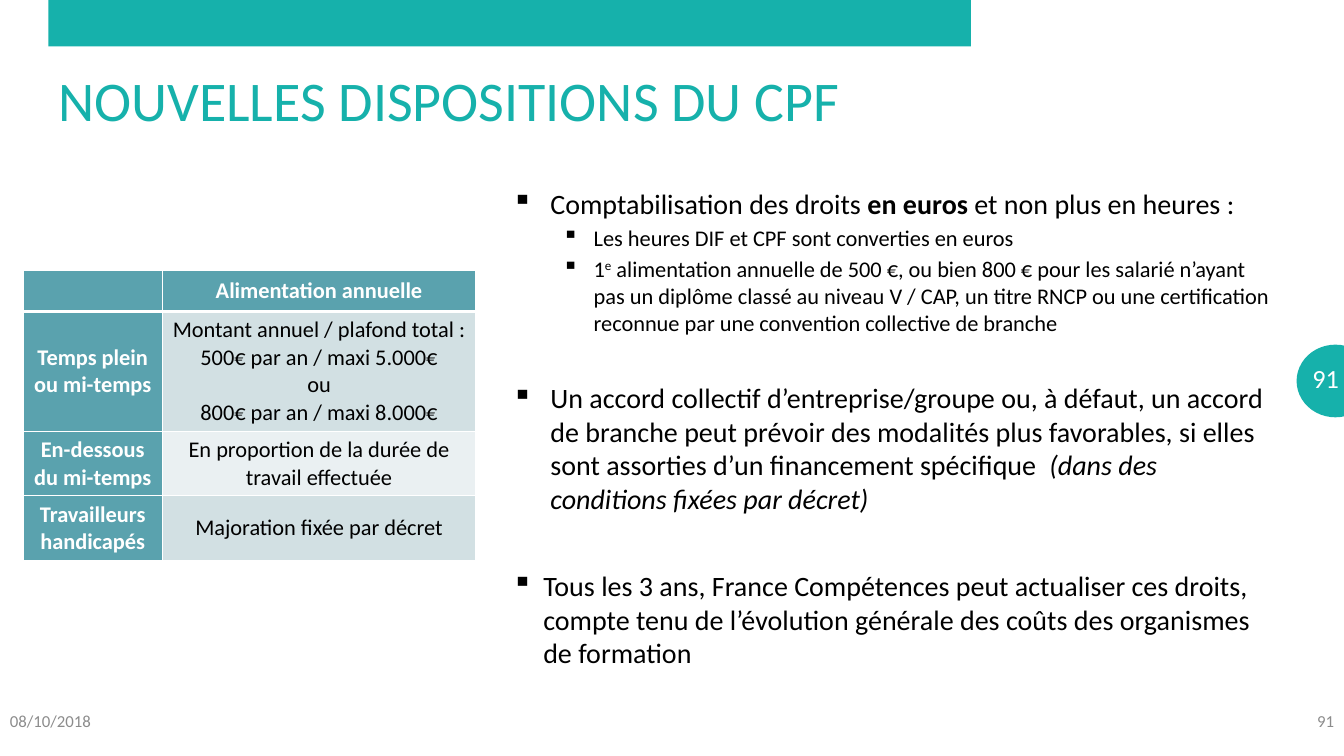
"""Build the slide on the new rules of the CPF training account."""
from dataclasses import dataclass

from lxml import etree
from pptx import Presentation
from pptx.dml.color import RGBColor
from pptx.enum.shapes import MSO_SHAPE
from pptx.enum.text import MSO_ANCHOR, PP_ALIGN
from pptx.oxml.ns import qn
from pptx.util import Pt

PX = 9144
RECTANGLE, OVAL = MSO_SHAPE.RECTANGLE, MSO_SHAPE.OVAL
TOP, MIDDLE = MSO_ANCHOR.TOP, MSO_ANCHOR.MIDDLE
LEFT, CENTER, RIGHT = PP_ALIGN.LEFT, PP_ALIGN.CENTER, PP_ALIGN.RIGHT


@dataclass(frozen=True)
class Theme:
    """Colours, font and type sizes of the slide."""
    font: str = "Calibri"
    accent: str = "16B1AB"
    header: str = "5AA2AE"
    band_dark: str = "D2E0E3"
    band_light: str = "EAF0F2"
    white: str = "FFFFFF"
    black: str = "000000"
    grey: str = "8C8C8C"
    title: float = 40
    body: float = 20
    badge: float = 18.7
    detail: float = 16
    footer: float = 12


THEME = Theme()

TABLE_ROWS = [
    ("", ["Alimentation annuelle"]),
    ("Temps plein ou mi-temps", ["Montant annuel / plafond total :", "500€ par an / maxi 5.000€",
                                 "ou", "800€ par an / maxi 8.000€"]),
    ("En-dessous du mi-temps", ["En proportion de la durée de travail effectuée"]),
    ("Travailleurs handicapés", ["Majoration fixée par décret"]),
]

BULLETS = [
    (THEME.body, 38, 38, 0, [("Comptabilisation des droits ", ""), ("en euros ", "bold"),
                             ("et non plus en heures :", "")]),
    (THEME.detail, 81, 31, 3, [("Les heures DIF et CPF sont converties en euros", "")]),
    (THEME.detail, 81, 31, 3, [
        ("1", ""), ("e", "superscript"),
        (" alimentation annuelle de 500 €, ou bien 800 € pour les salarié n’ayant pas un diplôme "
         "classé au niveau V / CAP, un titre RNCP ou une certification reconnue par une "
         "convention collective de branche", "")]),
    (THEME.body, 38, 38, 32, [
        ("Un accord collectif d’entreprise/groupe ou, à défaut, un accord de branche peut prévoir "
         "des modalités plus favorables, si elles sont assorties d’un financement spécifique  ", ""),
        ("(dans des conditions fixées par décret)", "italic")]),
    (THEME.body, 31, 31, 38, [
        ("Tous les 3 ans, France Compétences peut actualiser ces droits, compte tenu de "
         "l’évolution générale des coûts des organismes de formation", "")]),
]


def color(value):
    """Turn a hex string into a colour."""
    return RGBColor.from_string(value)


def box(*lengths):
    """Turn pixel lengths into EMU."""
    return [length * PX for length in lengths]


def add_run(paragraph, text, size, fill, style=""):
    """Add one formatted run to a paragraph."""
    run = paragraph.add_run()
    run.text = text
    run.font.name = THEME.font
    run.font.size = Pt(size)
    run.font.color.rgb = color(fill)
    run.font.bold = style == "bold"
    run.font.italic = style == "italic"
    if style == "superscript":
        run.font._element.set("baseline", "30000")


def add_block(slide, kind, place):
    """Add a plain accent-coloured shape."""
    shape = slide.shapes.add_shape(kind, *box(*place))
    shape.shadow.inherit = False
    shape.fill.solid()
    shape.fill.fore_color.rgb = color(THEME.accent)
    return shape


def add_frame(slide, place, anchor):
    """Add a wrapping text box and return its text frame."""
    frame = slide.shapes.add_textbox(*box(*place)).text_frame
    frame.word_wrap = True
    frame.vertical_anchor = anchor
    return frame


def add_label(slide, place, text, size, fill, align=LEFT):
    """Add a one-line text box."""
    frame = add_frame(slide, place, MIDDLE)
    frame.paragraphs[0].alignment = align
    add_run(frame.paragraphs[0], text, size, fill)
    return frame


def add_bullets(slide, place):
    """Add the bulleted body text."""
    frame = add_frame(slide, place, TOP)
    for index, (size, margin, hanging, before, runs) in enumerate(BULLETS):
        paragraph = frame.add_paragraph() if index else frame.paragraphs[0]
        properties = paragraph._p.get_or_add_pPr()
        properties.set("marL", str(margin * PX))
        properties.set("indent", str(-hanging * PX))
        etree.SubElement(properties, qn("a:buChar")).set("char", "▪")
        if before:
            paragraph.space_before = Pt(before)
        for text, style in runs:
            add_run(paragraph, text, size, THEME.black, style)


def set_borders(cell, top, bottom):
    """Give a cell white borders, with top and bottom widths in points."""
    properties = cell._tc.get_or_add_tcPr()
    for index, (side, width) in enumerate(zip("LRTB", (1, 1, top, bottom))):
        line = etree.Element(qn(f"a:ln{side}"), w=str(Pt(width)))
        fill = etree.SubElement(line, qn("a:solidFill"))
        etree.SubElement(fill, qn("a:srgbClr")).set("val", THEME.white)
        properties.insert(index, line)


def fill_cell(cell, lines, background, text_fill, style):
    """Fill a cell and write its centred lines."""
    cell.fill.solid()
    cell.fill.fore_color.rgb = color(background)
    cell.vertical_anchor = MIDDLE
    for index, text in enumerate(lines):
        frame = cell.text_frame
        paragraph = frame.add_paragraph() if index else frame.paragraphs[0]
        paragraph.alignment = CENTER
        if text:
            add_run(paragraph, text, THEME.detail, text_fill, style)


def add_funding_table(slide):
    """Add the table of yearly funding."""
    widths, heights = (138, 311), (41, 119, 64, 64)
    place = box(23, 268, sum(widths), sum(heights))
    table = slide.shapes.add_table(len(heights), len(widths), *place).table
    for column, width in zip(table.columns, widths):
        column.width = width * PX
    for index, (label, lines) in enumerate(TABLE_ROWS):
        table.rows[index].height = heights[index] * PX
        band = THEME.band_dark if index % 2 else THEME.band_light
        header = (THEME.header, THEME.white, "bold")
        fill_cell(table.cell(index, 0), [label], *header)
        fill_cell(table.cell(index, 1), lines, *((band, THEME.black, "") if index else header))
        for cell in table.rows[index].cells:
            set_borders(cell, 3 if index == 1 else 1, 3 if index == 0 else 1)


def main():
    """Build and save the slide."""
    presentation = Presentation()
    presentation.slide_width, presentation.slide_height = box(1333, 750)
    slide = presentation.slides.add_slide(presentation.slide_layouts[6])

    add_block(slide, RECTANGLE, (48, 0, 915, 46)).line.fill.background()
    badge = add_block(slide, OVAL, (1287, 343, 75, 70))
    badge.line.color.rgb = color(THEME.accent)
    badge.line.width = Pt(1.5)
    number = add_label(slide, (1283, 355, 58, 40), "91", THEME.badge, THEME.white, RIGHT)
    number.margin_left = number.margin_right = 13 * PX
    number.margin_top = number.margin_bottom = 7 * PX

    add_label(slide, (48, 60, 1239, 77), "NOUVELLES DISPOSITIONS DU CPF", THEME.title, THEME.accent)
    add_label(slide, (0, 695, 300, 40), "08/10/2018", THEME.footer, THEME.grey)
    add_label(slide, (1033, 695, 300, 40), "91", THEME.footer, THEME.grey, RIGHT)
    add_funding_table(slide)
    add_bullets(slide, (498, 180, 779, 512))
    presentation.save("out.pptx")


if __name__ == "__main__":
    main()
